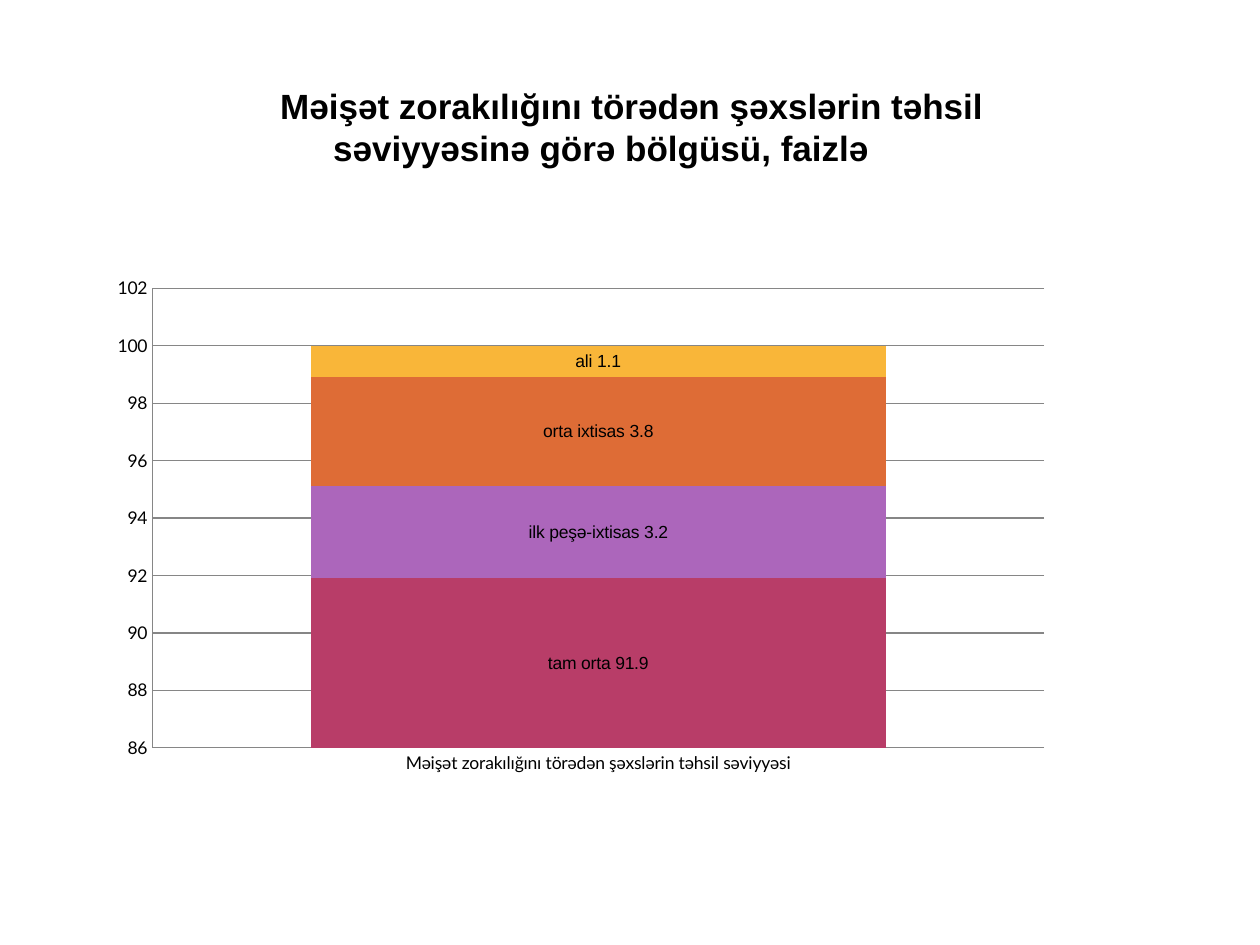
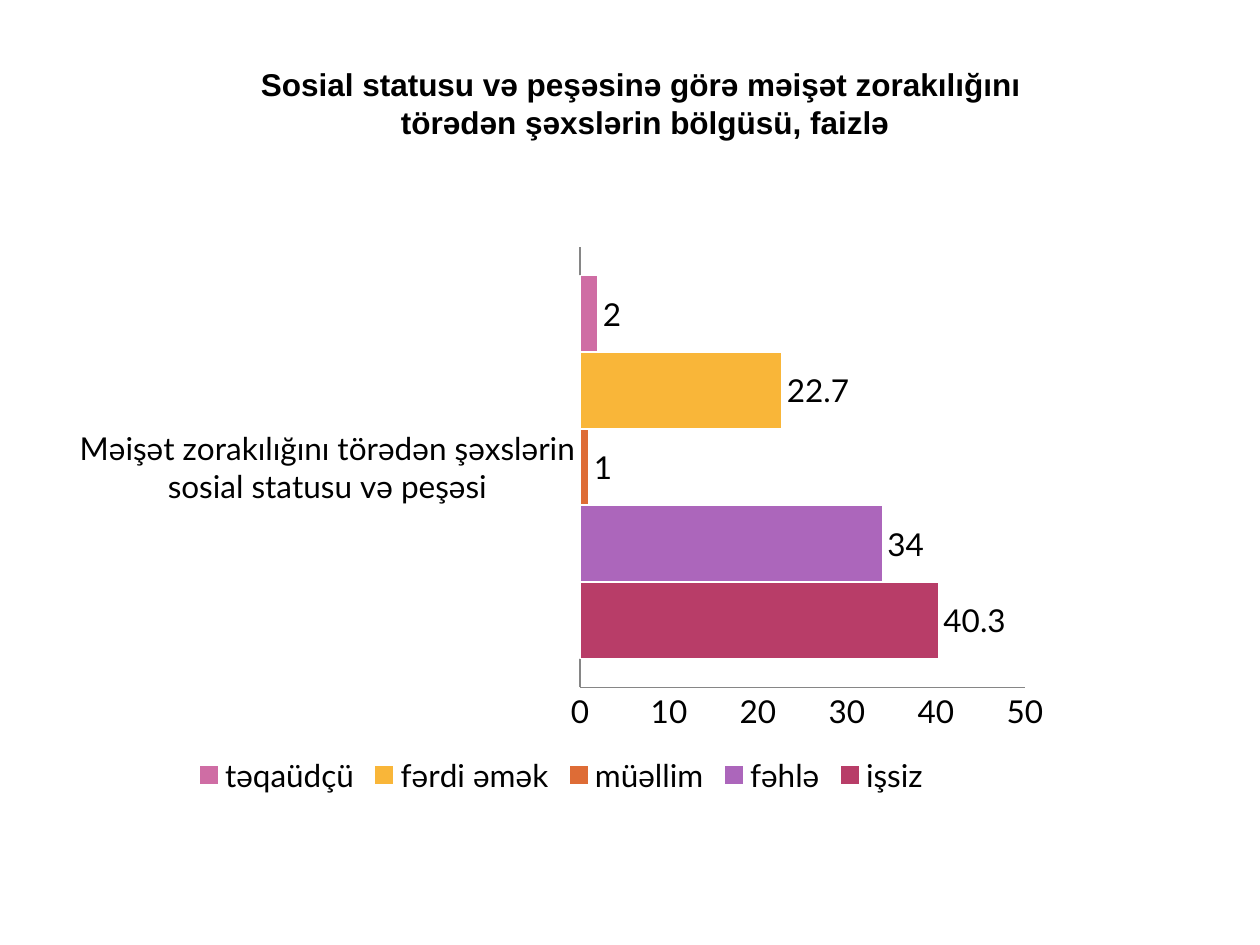
import pptx
import pptx.chart.data
import pptx.dml.color
import pptx.enum.chart
import pptx.enum.text
import pptx.oxml
import pptx.oxml.ns
import pptx.util
from pptx.util import Cm

COLORS = {
    "text": "000000", "background": "FFFFFF", "axis": "868686",
    "berry": "B83D68", "purple": "AC66BB", "orange": "DE6C36",
    "yellow": "F9B639", "pink": "CF6DA4",
}
SERIES_COLORS = ["berry", "purple", "orange", "yellow", "pink"]
TITLE_FONT, CHART_FONT = "Arial", "Lato"
CHART_TYPE = pptx.enum.chart.XL_CHART_TYPE


def rgb(name):
    return pptx.dml.color.RGBColor.from_string(COLORS[name])


def style_font(font, name, size, bold=False):
    font.name, font.size, font.bold = name, pptx.util.Pt(size), bold
    font.color.rgb = rgb("text")


def style_line(line):
    line.color.rgb = rgb("axis")
    line.width = pptx.util.Pt(0.75)


def chart_element(tag, **attributes):
    element = pptx.oxml.parse_xml(f"<c:{tag} {pptx.oxml.ns.nsdecls('c')}/>")
    for name, value in attributes.items():
        element.set(name, str(value))
    return element


def place_plot(chart, x, y, w, h):
    """Fix the inner plot area, in fractions of the chart."""
    plot_area = chart._chartSpace.chart.plotArea
    for old in plot_area.findall(pptx.oxml.ns.qn("c:layout")):
        plot_area.remove(old)
    layout, manual = chart_element("layout"), chart_element("manualLayout")
    manual.append(chart_element("layoutTarget", val="inner"))
    for tag in ("xMode", "yMode"):
        manual.append(chart_element(tag, val="edge"))
    for tag, value in zip("xywh", (x, y, w, h)):
        manual.append(chart_element(tag, val=value))
    layout.append(manual)
    plot_area.insert(0, layout)


class Deck:
    def __init__(self):
        self.presentation = pptx.Presentation()
        self.presentation.slide_width = Cm(25.4)
        self.presentation.slide_height = Cm(19.05)
        self.slide = None

    def add_slide(self):
        self.slide = self.presentation.slides.add_slide(self.presentation.slide_layouts[6])
        fill = self.slide.background.fill
        fill.solid()
        fill.fore_color.rgb = rgb("background")

    def title(self, text, box, size, indent=0, anchor="TOP"):
        """Write one centred bold paragraph per line of text."""
        frame = self.slide.shapes.add_textbox(*map(Cm, box)).text_frame
        frame.word_wrap = True
        frame.vertical_anchor = pptx.enum.text.MSO_ANCHOR[anchor]
        frame.text = text
        for paragraph in frame.paragraphs:
            paragraph.alignment = pptx.enum.text.PP_ALIGN.CENTER
            if indent:
                paragraph._p.get_or_add_pPr().set("indent", str(Cm(indent)))
            for run in paragraph.runs:
                style_font(run.font, TITLE_FONT, size, bold=True)

    def chart(self, kind, category, values, box, plot_box, size, gap, scale):
        """Draw a chart of one category with one series per entry of values."""
        data = pptx.chart.data.CategoryChartData()
        data.categories = [category]
        for name, value in values.items():
            data.add_series(name, [value])
        chart = self.slide.shapes.add_chart(kind, *map(Cm, box), data).chart
        chart.has_title = chart.has_legend = False
        style_font(chart.font, CHART_FONT, size)
        place_plot(chart, *plot_box)
        plot = chart.plots[0]
        plot.gap_width, plot.vary_by_categories = gap, False
        for series, color in zip(plot.series, SERIES_COLORS):
            series.format.fill.solid()
            series.format.fill.fore_color.rgb = rgb(color)
            series.data_labels.show_value = True
        for axis in (chart.category_axis, chart.value_axis):
            axis.major_tick_mark = pptx.enum.chart.XL_TICK_MARK.NONE
            axis.has_major_gridlines = False
            style_line(axis.format.line)
        axis = chart.value_axis
        axis.minimum_scale, axis.maximum_scale, axis.major_unit = scale
        return chart

    def education_chart(self, **options):
        chart = self.chart(CHART_TYPE.COLUMN_STACKED, **options)
        chart.plots[0].overlap = 100
        chart.value_axis.has_major_gridlines = True
        style_line(chart.value_axis.major_gridlines.format.line)
        for series in chart.plots[0].series:
            labels = series.data_labels
            labels.show_series_name = True
            style_font(labels.font, TITLE_FONT, 10)
            separator = chart_element("separator")
            separator.text = " "
            labels._element.find(pptx.oxml.ns.qn("c:showBubbleSize")).addnext(separator)

    def status_chart(self, **options):
        chart = self.chart(CHART_TYPE.BAR_CLUSTERED, **options)
        chart.has_legend = True
        chart.legend.position = pptx.enum.chart.XL_LEGEND_POSITION.BOTTOM
        chart.legend.include_in_layout = False
        style_font(chart.legend.font, CHART_FONT, options["size"])
        for series in chart.plots[0].series:
            series.format.line.color.rgb = rgb("background")
            series.format.line.width = pptx.util.Pt(1)
            series.data_labels.position = pptx.enum.chart.XL_LABEL_POSITION.OUTSIDE_END
            style_font(series.data_labels.font, CHART_FONT, options["size"])


def main():
    deck = Deck()

    deck.add_slide()
    deck.title("Məişət zorakılığını törədən şəxslərin təhsil səviyyəsinə görə bölgüsü, faizlə",
               (3.38, 1.57, 17.48, 1.96), size=20, indent=1.24, anchor="MIDDLE")
    deck.education_chart(
        category="Məişət zorakılığını törədən şəxslərin təhsil səviyyəsi",
        values={"tam orta": 91.9, "ilk peşə-ixtisas": 3.2, "orta ixtisas": 3.8, "ali": 1.1},
        box=(1.98, 5.36, 19.46, 11.3), plot_box=(0.056, 0.04, 0.924, 0.82),
        size=10, gap=55, scale=(86, 102, 2))

    deck.add_slide()
    deck.title("Sosial statusu və peşəsinə görə məişət zorakılığını \n"
               "törədən şəxslərin bölgüsü, faizlə",
               (3.38, 1.19, 19.25, 1.8), size=18)
    deck.status_chart(
        category="Məişət zorakılığını törədən şəxslərin sosial statusu və peşəsi",
        values={"işsiz": 40.3, "fəhlə": 34, "müəllim": 1, "fərdi əmək": 22.7, "təqaüdçü": 2},
        box=(1.19, 4.75, 20.24, 11.38), plot_box=(0.519, 0.02, 0.443, 0.78),
        size=18, gap=75, scale=(0, 50, 10))

    deck.presentation.save("out.pptx")


if __name__ == "__main__":
    main()
